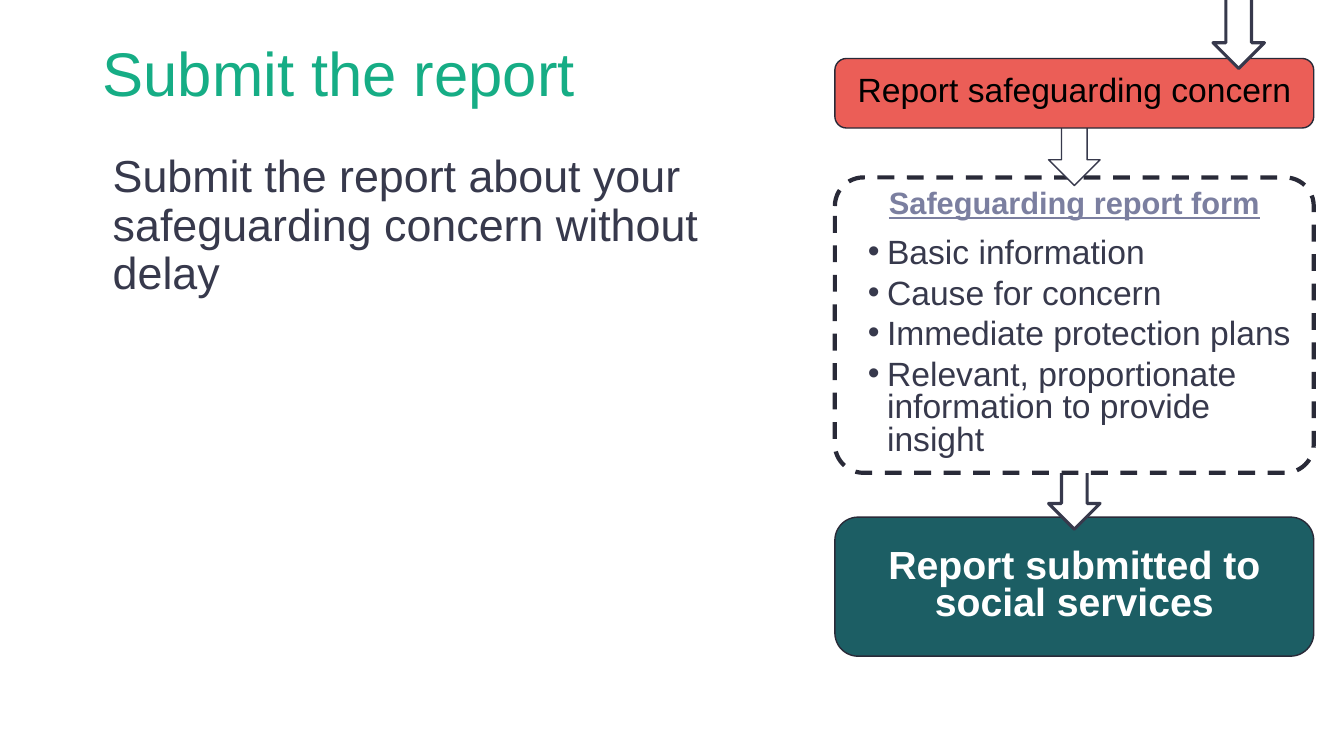
"""Build the slide that explains how to submit a safeguarding report."""
from dataclasses import dataclass
from lxml import etree
from pptx import Presentation
from pptx.dml.color import RGBColor
from pptx.enum.dml import MSO_LINE_DASH_STYLE as Dash
from pptx.enum.shapes import MSO_SHAPE as Preset
from pptx.enum.text import MSO_ANCHOR as Anchor, MSO_AUTO_SIZE as AutoSize, PP_ALIGN as Align
from pptx.oxml.ns import qn
from pptx.util import Inches, Pt


@dataclass(frozen=True)
class Theme:
    font: str = "Arial"
    green: str = "16AD85"
    ink: str = "37394C"
    outline: str = "292A38"
    link: str = "7B7FA0"
    teal: str = "1C5E64"
    red: str = "EB5E57"
    white: str = "FFFFFF"
    black: str = "000000"
    title: int = 44
    body: int = 32
    result: int = 28
    step: int = 24
    form: int = 22


theme = Theme()
presentation = Presentation()
presentation.slide_width, presentation.slide_height = Inches(13.33), Inches(7.5)
slide = presentation.slides.add_slide(presentation.slide_layouts[6])


def place(left, top, width, height):
    """Turn percentages of the slide into a box."""
    across, down = presentation.slide_width / 100, presentation.slide_height / 100
    return int(left * across), int(top * down), int(width * across), int(height * down)


def write(shape, lines, size, color, anchor, spacing, after=0, align=Align.LEFT, bold=False, underline=False):
    """Fill a shape with one paragraph per line."""
    frame = shape.text_frame
    frame.word_wrap = True
    frame.vertical_anchor = anchor
    for index, line in enumerate(lines):
        paragraph = frame.add_paragraph() if index else frame.paragraphs[0]
        paragraph.alignment = align
        paragraph.line_spacing = spacing
        paragraph.space_after = Pt(after)
        run = paragraph.add_run()
        run.text = line
        run.font.name = theme.font
        run.font.size = Pt(size)
        run.font.bold = bold
        run.font.underline = underline
        run.font.color.rgb = RGBColor.from_string(color)


title = slide.shapes.add_textbox(*place(6.9, 5.33, 52.36, 9.6))
write(title, ["Submit the report"], theme.title, theme.green, Anchor.MIDDLE, 0.9)
body = slide.shapes.add_textbox(*place(7.65, 19.73, 52.36, 54))
write(body, ["Submit the report about your safeguarding concern without delay"],
      theme.body, theme.ink, Anchor.TOP, 0.9, after=6)

flow_left, flow_width, arrow_width = 62.12, 35.63, 3.83
arrow_left = flow_left + (flow_width - arrow_width) / 2
box = (Preset.ROUNDED_RECTANGLE, flow_left, flow_width)
arrow = (Preset.DOWN_ARROW, arrow_left, arrow_width)
entry_arrow = (Preset.DOWN_ARROW, 90.25, arrow_width)

flow = [
    (box, 68.4, 18.4, theme.teal, theme.outline, 1, "Report submitted to social services",
     dict(size=theme.result, color=theme.white, anchor=Anchor.MIDDLE, bold=True)),
    (arrow, 60.8, 9.2, theme.white, theme.ink, 2.25, None, None),
    (box, 23.47, 39.07, theme.white, theme.outline, 3, "Safeguarding report form",
     dict(size=theme.form, color=theme.link, anchor=Anchor.TOP, after=6, bold=True, underline=True)),
    (arrow, 13.87, 10.67, theme.white, theme.ink, 1, None, None),
    (box, 7.73, 9.2, theme.red, theme.outline, 1, "Report safeguarding concern",
     dict(size=theme.step, color=theme.black, anchor=Anchor.MIDDLE)),
    (entry_arrow, -1.07, 10.13, theme.white, theme.ink, 2.25, None, None),
]
for (preset, left, width), top, height, fill, line, weight, text, style in flow:
    shape = slide.shapes.add_shape(preset, *place(left, top, width, height))
    shape.shadow.inherit = False
    shape.fill.solid()
    shape.fill.fore_color.rgb = RGBColor.from_string(fill)
    shape.line.color.rgb = RGBColor.from_string(line)
    shape.line.width = Pt(weight)
    if text:
        write(shape, [text], spacing=0.8, align=Align.CENTER, **style)
    if text == "Safeguarding report form":
        shape.adjustments[0] = 0.097
        shape.line.dash_style = Dash.DASH

contents = slide.shapes.add_textbox(*place(63.84, 30.8, 33.83, 30.53))
write(contents, ["Basic information", "Cause for concern", "Immediate protection plans",
                 "Relevant, proportionate information to provide insight"],
      theme.step, theme.ink, Anchor.MIDDLE, 0.8, after=6)
contents.text_frame.auto_size = AutoSize.SHAPE_TO_FIT_TEXT
for paragraph in contents.text_frame.paragraphs:
    properties = paragraph._p.get_or_add_pPr()
    properties.set("marL", str(Inches(0.19)))
    properties.set("indent", str(-Inches(0.19)))
    etree.SubElement(properties, qn("a:buFont"), typeface=theme.font)
    etree.SubElement(properties, qn("a:buChar"), char="•")

presentation.save("out.pptx")
